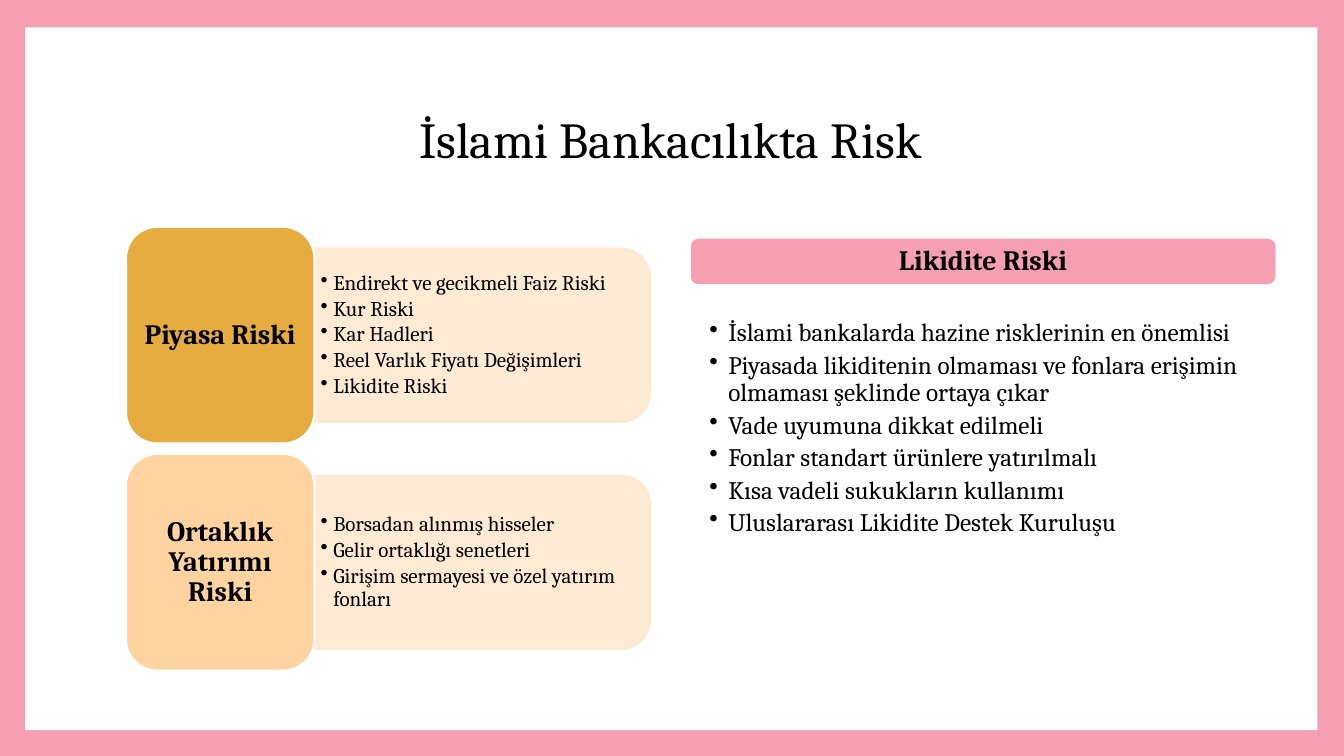
from dataclasses import dataclass

from lxml import etree
from pptx import Presentation
from pptx.dml.color import RGBColor
from pptx.enum.shapes import MSO_SHAPE
from pptx.enum.text import MSO_ANCHOR, PP_ALIGN
from pptx.oxml.ns import qn
from pptx.util import Pt

RECT = MSO_SHAPE.RECTANGLE
ROUNDED = MSO_SHAPE.ROUNDED_RECTANGLE
ROUND_TOP = MSO_SHAPE.ROUND_2_SAME_RECTANGLE
TOP, MIDDLE = MSO_ANCHOR.TOP, MSO_ANCHOR.MIDDLE
LEFT, CENTER = PP_ALIGN.LEFT, PP_ALIGN.CENTER

PINK = RGBColor(0xF7, 0x9F, 0xB2)
WHITE = RGBColor(0xFF, 0xFF, 0xFF)
BLACK = RGBColor(0, 0, 0)
GOLD = RGBColor(0xE7, 0xAC, 0x40)
PEACH = RGBColor(0xFF, 0xD4, 0xA0)
CREAM = RGBColor(0xFF, 0xE8, 0xCF)

FONT = "Cambria"
LABEL_LEFT, LABEL_TOP, LABEL_W, LABEL_H = 90, 162, 134.6, 154.8
PANEL_W, PANEL_H = 239.6, 123.8
BODY_H = 111.6
ROW_PITCH = 162.2


@dataclass(frozen=True)
class Risk:
    name: str
    color: RGBColor
    points: tuple[str, ...]


RISKS = (
    Risk("Piyasa Riski", GOLD, (
        "Endirekt ve gecikmeli Faiz Riski",
        "Kur Riski",
        "Kar Hadleri",
        "Reel Varlık Fiyatı Değişimleri",
        "Likidite Riski",
    )),
    Risk("Ortaklık Yatırımı Riski", PEACH, (
        "Borsadan alınmış hisseler",
        "Gelir ortaklığı senetleri",
        "Girişim sermayesi ve özel yatırım fonları",
    )),
)
LIQUIDITY_POINTS = (
    "İslami bankalarda hazine risklerinin en önemlisi",
    "Piyasada likiditenin olmaması ve fonlara erişimin olmaması şeklinde ortaya çıkar",
    "Vade uyumuna dikkat edilmeli",
    "Fonlar standart ürünlere yatırılmalı",
    "Kısa vadeli sukukların kullanımı",
    "Uluslararası Likidite Destek Kuruluşu",
)


def write(tf, lines, *, size, bold=False, align=LEFT, anchor=MIDDLE,
          insets=(6, 3, 6, 3), after=0, indent=0):
    tf.word_wrap = True
    tf.vertical_anchor = anchor
    tf.margin_left, tf.margin_top, tf.margin_right, tf.margin_bottom = map(Pt, insets)
    for i, line in enumerate(lines):
        p = tf.paragraphs[0] if i == 0 else tf.add_paragraph()
        p.alignment = align
        p.line_spacing = 0.9
        p.space_before = Pt(0)
        p.space_after = Pt(after)
        r = p.add_run()
        r.text = line
        r.font.name = FONT
        r.font.size = Pt(size)
        r.font.bold = bold
        r.font.color.rgb = BLACK
        if indent:
            pPr = p._p.get_or_add_pPr()
            pPr.set("marL", str(Pt(indent)))
            pPr.set("indent", str(-Pt(indent)))
            etree.SubElement(pPr, qn("a:buChar")).set("char", "•")


def add_box(s, kind, left, top, width, height, fill, line=None):
    sp = s.shapes.add_shape(kind, Pt(left), Pt(top), Pt(width), Pt(height))
    sp.shadow.inherit = False
    sp.fill.solid()
    sp.fill.fore_color.rgb = fill
    if line is None:
        sp.line.fill.background()
    else:
        sp.line.color.rgb = line
        sp.line.width = Pt(1.5)
    return sp


def add_bullets(s, left, top, width, height, lines, **fmt):
    sp = s.shapes.add_textbox(Pt(left), Pt(top), Pt(width), Pt(height))
    write(sp.text_frame, lines, **fmt)


def set_opacity(sp, percent: int) -> None:
    for color in sp.element.spPr.iter(qn("a:srgbClr")):
        etree.SubElement(color, qn("a:alpha")).set("val", str(percent * 1000))


def add_risk(s, risk: Risk, top: float) -> None:
    right = LABEL_LEFT + LABEL_W
    middle = top + LABEL_H / 2
    panel = add_box(s, ROUND_TOP, right + (PANEL_W - PANEL_H) / 2,
                    middle - PANEL_W / 2, PANEL_H, PANEL_W, CREAM, CREAM)
    panel.rotation = 90
    set_opacity(panel, 90)
    add_bullets(s, right, middle - BODY_H / 2, 233.5, BODY_H, risk.points,
                size=15, after=2.25, indent=9, insets=(4.5, 2.25, 4.5, 2.25))
    label = add_box(s, ROUNDED, LABEL_LEFT, top, LABEL_W, LABEL_H, risk.color, WHITE)
    write(label.text_frame, [risk.name], size=20, bold=True, align=CENTER)


def main() -> None:
    prs = Presentation()
    prs.slide_width, prs.slide_height = Pt(960), Pt(540)
    s = prs.slides.add_slide(prs.slide_layouts[5])
    s.background.fill.solid()
    s.background.fill.fore_color.rgb = PINK

    page = add_box(s, RECT, 18, 19.5, 923, 502, WHITE)
    title = s.shapes.title
    page.element.addnext(title.element)
    title.left, title.top, title.width, title.height = Pt(90), Pt(48), Pt(778), Pt(107)
    write(title.text_frame, ["İslami Bankacılıkta Risk"], size=36, align=CENTER)

    for i, risk in enumerate(RISKS):
        add_risk(s, risk, LABEL_TOP + i * ROW_PITCH)

    banner = add_box(s, ROUNDED, 493.5, 170.5, 417.5, 32.5, PINK)
    write(banner.text_frame, ["Likidite Riski"], size=20, bold=True, align=CENTER,
          insets=(6, 6, 6, 6))
    add_bullets(s, 493.5, 226.5, 417.5, 160, LIQUIDITY_POINTS, size=18, anchor=TOP,
                after=3.75, indent=13.5, insets=(13.25, 2.25, 10, 2.25))
    prs.save("out.pptx")


if __name__ == "__main__":
    main()
